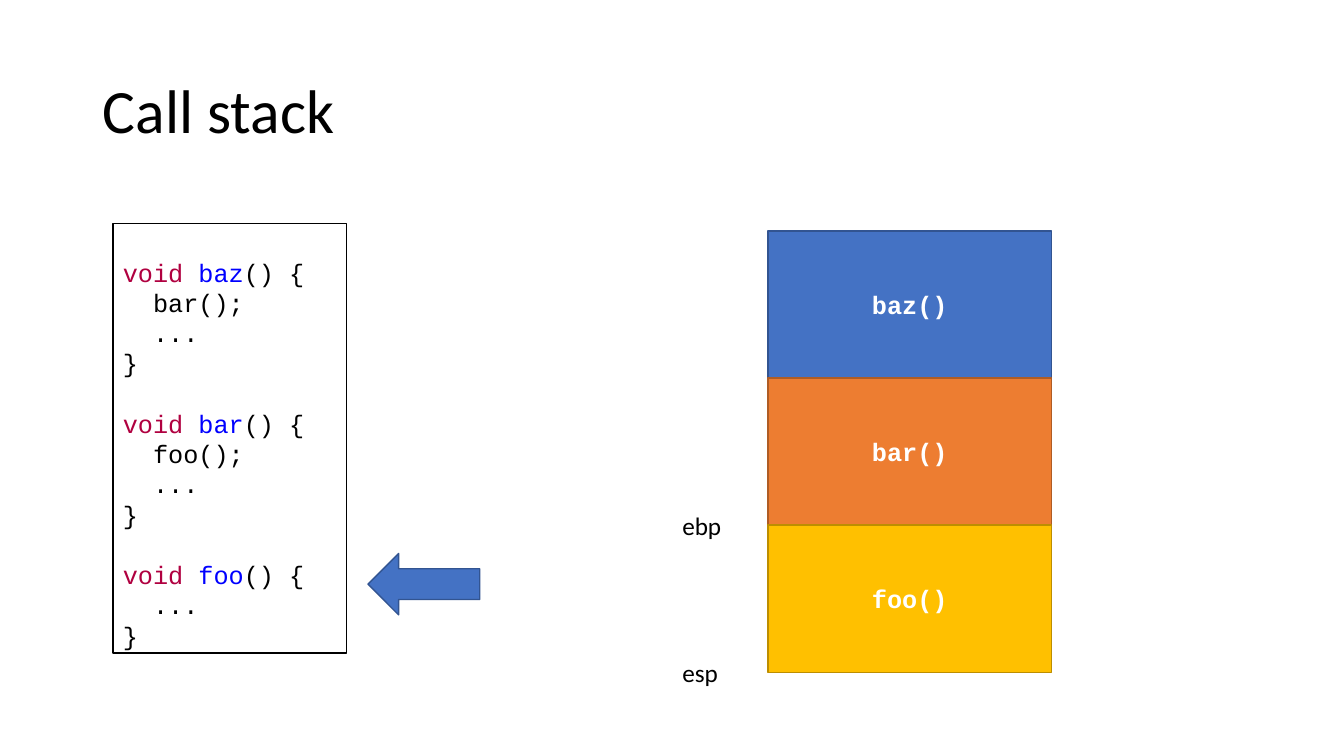
from dataclasses import dataclass
from pptx import Presentation
from pptx.dml.color import RGBColor
from pptx.enum.shapes import MSO_SHAPE
from pptx.enum.text import MSO_ANCHOR, MSO_AUTO_SIZE, PP_ALIGN
from pptx.util import Pt

TITLE = "Call stack"
CODE = [
    ("baz", ["bar();", "..."]),
    ("bar", ["foo();", "..."]),
    ("foo", ["..."]),
]
FRAMES = [
    ("baz()", "4472C4", "325491"),
    ("bar()", "ED7D31", "AF5C24"),
    ("foo()", "FFC000", "BD8E00"),
]
MARKS = [("ebp", 2), ("esp", 3)]  # register, stack edge counted from the top


@dataclass
class Theme:
    sans: str = "Calibri"
    mono: str = "Courier New"
    head: int = 44
    body: int = 18
    ink: str = "000000"
    paper: str = "FFFFFF"
    word: str = "B00040"
    name: str = "0000FF"
    arrow: str = "4472C4"
    edge: str = "325491"


theme = Theme()
TITLE_BOX = (66.24, 28.8, 828, 104.4)
CODE_BOX = (80.64, 159.84, 167.04, 306.72)
ARROW_BOX = (262.8, 395.28, 79.92, 43.92)
STACK_X, STACK_Y, STACK_W, FRAME_H = 548.64, 164.88, 202.32, 105.12
MARK_X, MARK_W, MARK_H = 480.24, 42.48, 28.8
LINE, INDENT, INSET = 21.6, 21.6, 3.6


def assign(item, **values):
    for key, value in values.items():
        setattr(item, key, value)


def write(para, text, color=theme.ink, font=theme.mono, size=theme.body, bold=False):
    run = para.add_run()
    run.text = text
    assign(run.font, name=font, size=Pt(size), bold=bold)
    run.font.color.rgb = RGBColor.from_string(color)


def draw(slide, kind, box, fill, line):
    shape = slide.shapes.add_shape(kind, *map(Pt, box))
    shape.shadow.inherit = False
    shape.fill.solid()
    shape.fill.fore_color.rgb = RGBColor.from_string(fill)
    shape.line.color.rgb = RGBColor.from_string(line)
    shape.line.width = Pt(1)
    return shape


def add_title(slide):
    title = slide.shapes.title
    assign(title, **dict(zip(("left", "top", "width", "height"), map(Pt, TITLE_BOX))))
    frame = title.text_frame
    assign(frame, vertical_anchor=MSO_ANCHOR.MIDDLE, auto_size=MSO_AUTO_SIZE.NONE)
    para = frame.paragraphs[0]
    assign(para, alignment=PP_ALIGN.LEFT, line_spacing=0.9)
    write(para, TITLE, font=theme.sans, size=theme.head)


def add_code(slide):
    box = draw(slide, MSO_SHAPE.RECTANGLE, CODE_BOX, theme.paper, theme.ink)
    frame = box.text_frame
    assign(frame, vertical_anchor=MSO_ANCHOR.MIDDLE, margin_top=Pt(INSET + LINE))
    para = frame.paragraphs[0]
    for name, body in CODE:
        if para.runs:
            para = frame.add_paragraph()
            para.space_before = Pt(LINE)
        para.alignment = PP_ALIGN.LEFT
        write(para, "void ", theme.word)
        write(para, name, theme.name)
        write(para, "() {")
        for text in body + ["}"]:
            para = frame.add_paragraph()
            para.alignment = PP_ALIGN.LEFT
            if text != "}":
                para._p.get_or_add_pPr().set("marL", str(Pt(INDENT)))
            write(para, text)


def add_stack(slide):
    for row, (call, fill, line) in enumerate(FRAMES):
        box = (STACK_X, STACK_Y + row * FRAME_H, STACK_W, FRAME_H)
        shape = draw(slide, MSO_SHAPE.RECTANGLE, box, fill, line)
        shape.text_frame.vertical_anchor = MSO_ANCHOR.MIDDLE
        para = shape.text_frame.paragraphs[0]
        para.alignment = PP_ALIGN.CENTER
        write(para, call, theme.paper, bold=True)
    for name, edge in MARKS:
        top = STACK_Y + edge * FRAME_H - MARK_H / 2
        label = slide.shapes.add_textbox(Pt(MARK_X), Pt(top), Pt(MARK_W), Pt(MARK_H))
        assign(label.text_frame, word_wrap=False, auto_size=MSO_AUTO_SIZE.SHAPE_TO_FIT_TEXT)
        write(label.text_frame.paragraphs[0], name, font=theme.sans)


def main():
    deck = Presentation()
    assign(deck, slide_width=Pt(960), slide_height=Pt(540))
    slide = deck.slides.add_slide(deck.slide_layouts[5])
    add_title(slide)
    add_code(slide)
    draw(slide, MSO_SHAPE.LEFT_ARROW, ARROW_BOX, theme.arrow, theme.edge)
    add_stack(slide)
    deck.save("out.pptx")


if __name__ == "__main__":
    main()
